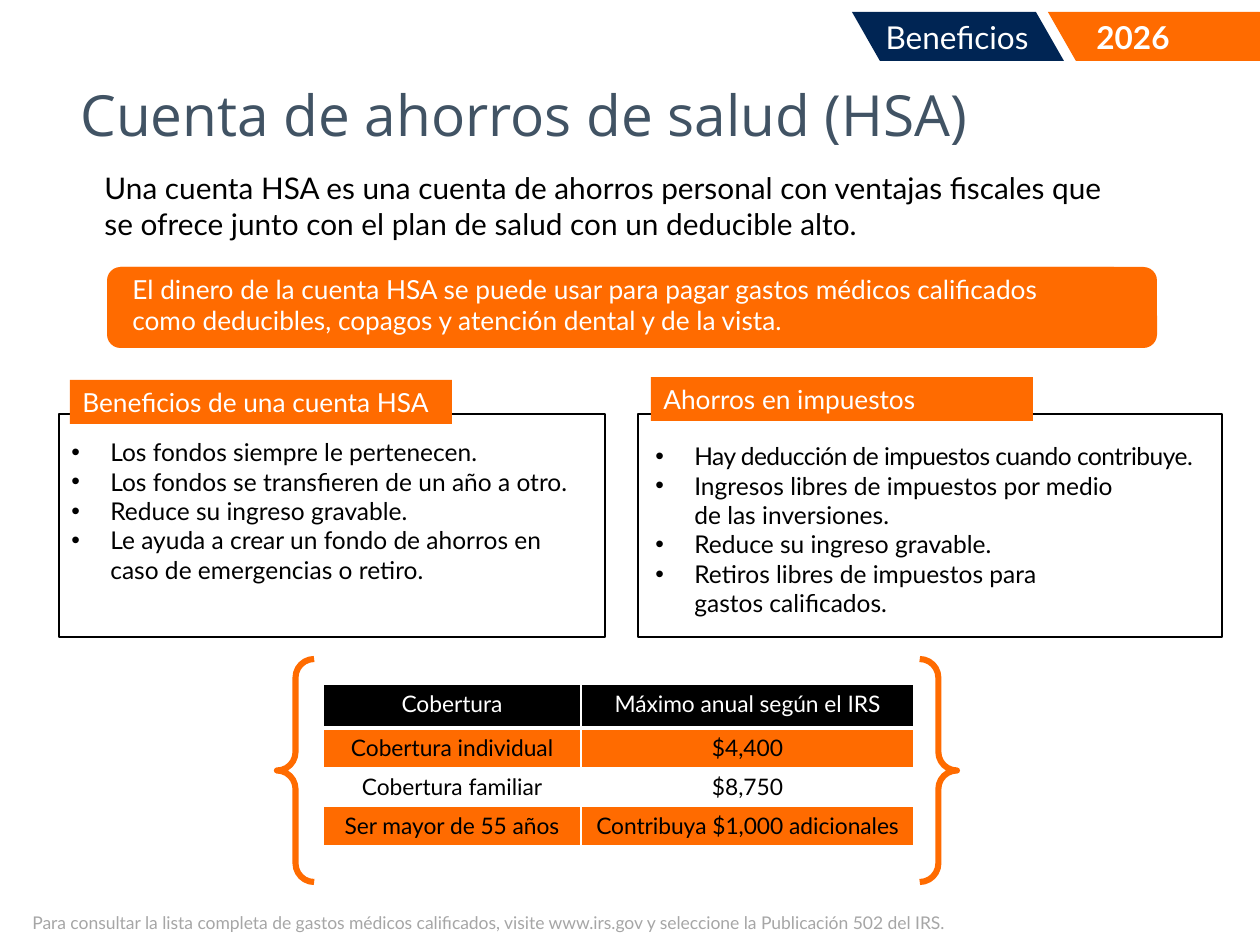
from lxml.etree import SubElement
from pptx import Presentation
from pptx.dml.color import RGBColor
from pptx.enum.shapes import MSO_SHAPE as Preset
from pptx.enum.text import MSO_ANCHOR as Anchor, PP_ALIGN as Align
from pptx.oxml.ns import qn
from pptx.util import Pt

EMU_PER_PX = 914400 / 126
ORANGE, NAVY, BLACK, WHITE = "FF6B00", "002554", "000000", "FFFFFF"
BENEFITS = [
    "Los fondos siempre le pertenecen.",
    "Los fondos se transfieren de un año a otro.",
    "Reduce su ingreso gravable.",
    "Le ayuda a crear un fondo de ahorros en caso de emergencias o retiro.",
]
SAVINGS = [
    "Hay deducción de impuestos cuando contribuye.",
    "Ingresos libres de impuestos por medio \vde las inversiones.",
    "Reduce su ingreso gravable.",
    "Retiros libres de impuestos para \vgastos calificados.",
]
COVERAGE = [
    ("Cobertura", "Máximo anual según el IRS"),
    ("Cobertura individual", "$4,400"),
    ("Cobertura familiar", "$8,750"),
    ("Ser mayor de 55 años", "Contribuya $1,000 adicionales"),
]


def px(length):
    return round(length * EMU_PER_PX)


def box(*lengths):
    return [px(length) for length in lengths]


def color(value):
    return RGBColor.from_string(value)


def paint(shape, fill=None, line=None, width=0.75):
    shape.shadow.inherit = False
    if fill:
        shape.fill.solid()
        shape.fill.fore_color.rgb = color(fill)
    else:
        shape.fill.background()
    if line:
        shape.line.color.rgb = color(line)
        shape.line.width = Pt(width)
    else:
        shape.line.fill.background()


def add_preset(slide, preset, place, fill=None, line=None, width=0.75):
    shape = slide.shapes.add_shape(preset, *box(*place))
    paint(shape, fill, line, width)
    return shape


def add_ribbon(slide, points, fill):
    builder = slide.shapes.build_freeform(*points[0], scale=EMU_PER_PX)
    builder.add_line_segments(points[1:], close=True)
    paint(builder.convert_to_shape(), fill)


def write(text_frame, lines, size, ink, align=Align.LEFT, font="Lato", bold=False):
    text_frame.text = "\n".join(lines)
    for paragraph in text_frame.paragraphs:
        paragraph.alignment = align
        for run in paragraph.runs:
            run.font.size = Pt(size)
            run.font.name = font
            run.font.bold = bold
            run.font.color.rgb = color(ink)


def add_text(slide, place, text, size, ink, wrap=True, **style):
    text_frame = slide.shapes.add_textbox(*box(*place)).text_frame
    text_frame.word_wrap = wrap
    write(text_frame, [text], size, ink, **style)
    return text_frame


def add_label(slide, place, text):
    text_frame = add_preset(slide, Preset.RECTANGLE, place, ORANGE).text_frame
    text_frame.word_wrap = True
    text_frame.vertical_anchor = Anchor.TOP
    write(text_frame, [text], 15, WHITE)


def add_bullets(slide, place, lines):
    text_frame = slide.shapes.add_textbox(*box(*place)).text_frame
    text_frame.word_wrap = True
    write(text_frame, lines, 14, BLACK)
    for paragraph in text_frame.paragraphs:
        properties = paragraph._p.get_or_add_pPr()
        properties.set("marL", str(px(39)))
        properties.set("indent", str(-px(39)))
        SubElement(properties, qn("a:buFont")).set("typeface", "Arial")
        SubElement(properties, qn("a:buChar")).set("char", "•")
    return text_frame


def set_borders(cell, bottom):
    properties = cell._tc.get_or_add_tcPr()
    widths = {"a:lnL": 1, "a:lnR": 1, "a:lnT": 1, "a:lnB": bottom}
    for index, (side, width) in enumerate(widths.items()):
        line = SubElement(properties, qn(side), w=str(Pt(width)))
        fill = SubElement(line, qn("a:solidFill"))
        SubElement(fill, qn("a:srgbClr"), val=WHITE)
        properties.insert(index, line)


def add_coverage_table(slide, place, column_widths, row_heights):
    table = slide.shapes.add_table(len(COVERAGE), 2, *box(*place)).table
    for column, width in zip(table.columns, column_widths):
        column.width = px(width)
    for row, height in zip(table.rows, row_heights):
        row.height = px(height)
    row_fills = [BLACK, ORANGE, None, ORANGE]
    for row_index, (texts, fill) in enumerate(zip(COVERAGE, row_fills)):
        header = row_index == 0
        for column_index, text in enumerate(texts):
            cell = table.cell(row_index, column_index)
            cell.margin_left = cell.margin_right = px(15)
            cell.margin_top = cell.margin_bottom = px(6)
            write(cell.text_frame, [text], 13, WHITE if header else BLACK, Align.CENTER)
            if fill:
                cell.fill.solid()
                cell.fill.fore_color.rgb = color(fill)
            else:
                cell.fill.background()
            set_borders(cell, 3 if header else 1)


def main():
    presentation = Presentation()
    presentation.slide_width, presentation.slide_height = box(1260, 945)
    slide = presentation.slides.add_slide(presentation.slide_layouts[6])

    add_ribbon(slide, [(1048, 12), (1260, 12), (1260, 61), (1076, 61)], ORANGE)
    add_ribbon(slide, [(852, 12), (1036, 12), (1064, 61), (880, 61)], NAVY)
    add_text(slide, (1058, 12, 150, 50), "2026", 18, WHITE, align=Align.CENTER, bold=True)
    add_text(slide, (873, 12, 168, 50), "Beneficios", 18, WHITE, wrap=False, align=Align.CENTER)

    title = add_text(slide, (68, 45, 1086, 146), "Cuenta de ahorros de salud (HSA)",
                     32.4, "415364", font="Open Sans")
    title.vertical_anchor = Anchor.MIDDLE
    title.paragraphs[0].line_spacing = 0.9
    add_text(slide, (92, 164, 1050, 84),
             "Una cuenta HSA es una cuenta de ahorros personal con ventajas fiscales que "
             "se ofrece junto con el plan de salud con un deducible alto.", 17, BLACK)

    add_preset(slide, Preset.ROUNDED_RECTANGLE, (107, 267, 1050, 81), ORANGE)
    add_label(slide, (120, 267, 994, 77),
              "El dinero de la cuenta HSA se puede usar para pagar gastos médicos calificados "
              "como deducibles, copagos y atención dental y de la vista.")

    add_preset(slide, Preset.RECTANGLE, (59, 414, 546, 223), line=BLACK)
    add_preset(slide, Preset.RECTANGLE, (638, 414, 584, 223), line=BLACK)
    add_bullets(slide, (59, 431, 530, 161), BENEFITS)
    savings = add_bullets(slide, (643, 435, 580, 190), SAVINGS)
    savings.paragraphs[0].runs[0].font._element.set("spc", "-30")
    add_label(slide, (70, 380, 382, 44), "Beneficios de una cuenta HSA")
    add_label(slide, (651, 377, 382, 44), "Ahorros en impuestos")

    add_coverage_table(slide, (323, 684, 591, 140), (258, 333), (44, 32, 32, 32))
    add_preset(slide, Preset.DOUBLE_BRACE, (277, 659, 680, 223), line=ORANGE, width=3.5)
    add_text(slide, (20, 906, 1135, 34),
             "Para consultar la lista completa de gastos médicos calificados, visite www.irs.gov "
             "y seleccione la Publicación 502 del IRS.", 10, "A6A6A6")
    presentation.save("out.pptx")


if __name__ == "__main__":
    main()
